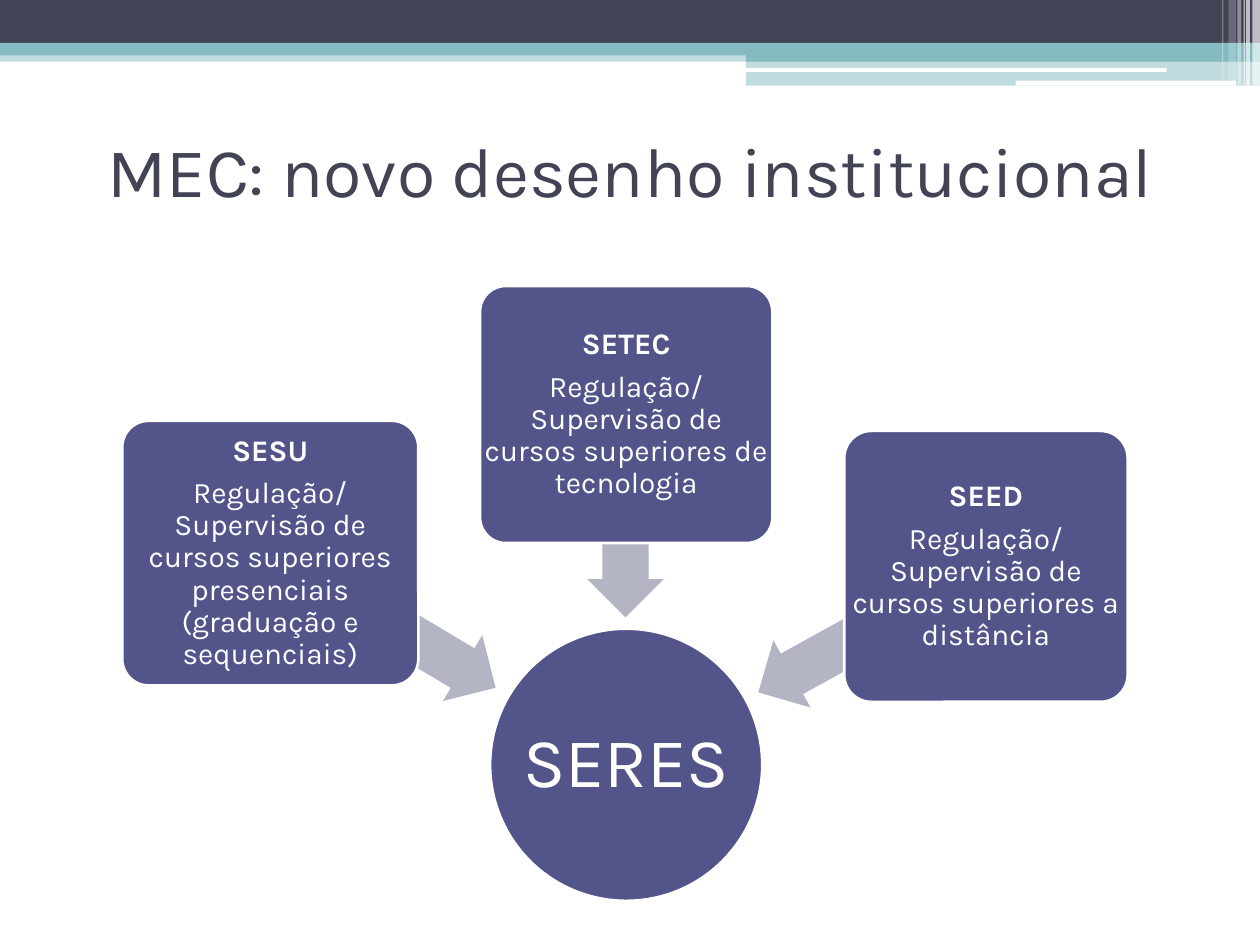
from lxml import etree
from pptx import Presentation
from pptx.dml.color import RGBColor
from pptx.enum.shapes import MSO_SHAPE as Kind
from pptx.enum.text import MSO_ANCHOR as Anchor, PP_ALIGN as Align
from pptx.oxml.ns import qn
from pptx.util import Inches, Pt

FONT = "Karla"
COLORS = {"ink": "424456", "teal": "83BBC1", "white": "FFFFFF",
          "box": "53548A", "arrow": "B3B4C4"}

TITLE = "MEC: novo desenho institucional"
HUB = ("SERES", (3.89, 4.99, 2.16, 2.16))
DUTY = "Regulação/ Supervisão de cursos superiores "
# name, duty, box place, arrow place, arrow angle
UNITS = [
    ("SESU", DUTY + "presenciais (graduação e sequenciais)",
     (0.97, 3.34, 2.35, 2.1), (2, 4.62, 2.08, 0.61), 210.8),
    ("SETEC", DUTY + "de tecnologia",
     (3.81, 2.27, 2.32, 2.04), (4.16, 3.79, 1.61, 0.61), 270),
    ("SEED", DUTY + "a distância",
     (6.7, 3.42, 2.25, 2.15), (5.89, 4.69, 2.07, 0.61), 331.1),
]

# place, color, opacity in percent
BANDS = [
    ((0, 0.4, 10, 0.09), "teal", 50),
    ((0, 0, 10, 0.34), "ink", 100),
    ((0, 0.34, 10, 0.1), "teal", 100),
    ((5.92, 0.39, 4.08, 0.1), "teal", 100),
    ((5.92, 0.48, 4.08, 0.2), "teal", 50),
]
LINES = [(5.91, 0.54, 3.35, 0.03), (8.06, 0.64, 1.75, 0.04)]
# left, width, height, opacity in percent
STRIPES = [
    (9.94, 0.06, 0.68, 65), (9.89, 0.03, 0.68, 65), (9.87, 0.01, 0.68, 60),
    (9.82, 0.03, 0.68, 40), (9.75, 0.06, 0.64, 20), (9.7, 0.01, 0.64, 30),
]


def rgb(name):
    return RGBColor.from_string(COLORS[name])


def add_form(slide, kind, place, color, adj=(), alpha=100, edge=0, turn=0):
    form = slide.shapes.add_shape(kind, *map(Inches, place))
    form.shadow.inherit = False
    form.rotation = turn
    for i, value in enumerate(adj):
        form.adjustments[i] = value
    form.fill.solid()
    form.fill.fore_color.rgb = rgb(color)
    if alpha < 100:
        tone = form.fill._xPr.find(qn("a:solidFill"))[0]
        etree.SubElement(tone, qn("a:alpha"), val=str(alpha * 1000))
    if edge:
        form.line.color.rgb = rgb("white")
        form.line.width = Pt(edge)
    else:
        form.line.fill.background()


def add_text(slide, place, parts, size, color, inset, layout):
    """Add centred text; parts holds (text, bold) for each paragraph."""
    frame = slide.shapes.add_textbox(*map(Inches, place)).text_frame
    frame.word_wrap = True
    frame.vertical_anchor = Anchor.MIDDLE
    for side in ("left", "right", "top", "bottom"):
        setattr(frame, "margin_" + side, Inches(inset))
    for i, (text, bold) in enumerate(parts):
        para = frame.add_paragraph() if i else frame.paragraphs[0]
        for key, value in layout.items():
            setattr(para, key, value)
        run = para.add_run()
        run.text = text
        look = {"name": FONT, "size": Pt(size), "bold": bold}
        for key, value in look.items():
            setattr(run.font, key, value)
        run.font.color.rgb = rgb(color)


def main():
    deck = Presentation()
    deck.slide_width, deck.slide_height = Inches(10), Inches(7.5)
    slide = deck.slides.add_slide(deck.slide_layouts[6])

    for place, color, alpha in BANDS:
        add_form(slide, Kind.RECTANGLE, place, color, alpha=alpha)
    for place in LINES:
        add_form(slide, Kind.ROUNDED_RECTANGLE, place, "white", [0.17])
    for left, width, height, alpha in STRIPES:
        add_form(slide, Kind.RECTANGLE, (left, 0, width, height), "white",
                 alpha=alpha)

    plain = {"alignment": Align.CENTER}
    tight = {**plain, "line_spacing": 0.9, "space_after": Pt(6)}
    add_text(slide, (0.5, 0.76, 9, 1.17), [(TITLE, False)], 40, "ink", 0.05,
             plain)

    name, place = HUB
    add_form(slide, Kind.OVAL, place, "box", edge=1.5)
    add_text(slide, place, [(name, False)], 40, "white", 0.03, tight)
    for name, duty, place, aim, turn in UNITS:
        add_form(slide, Kind.LEFT_ARROW, aim, "arrow", [0.6, 0.5], turn=turn)
        add_form(slide, Kind.ROUNDED_RECTANGLE, place, "box", [0.1], edge=1.5)
        add_text(slide, place, [(name, True), (duty, False)], 17, "white",
                 0.03, tight)

    deck.save("out.pptx")


if __name__ == "__main__":
    main()
